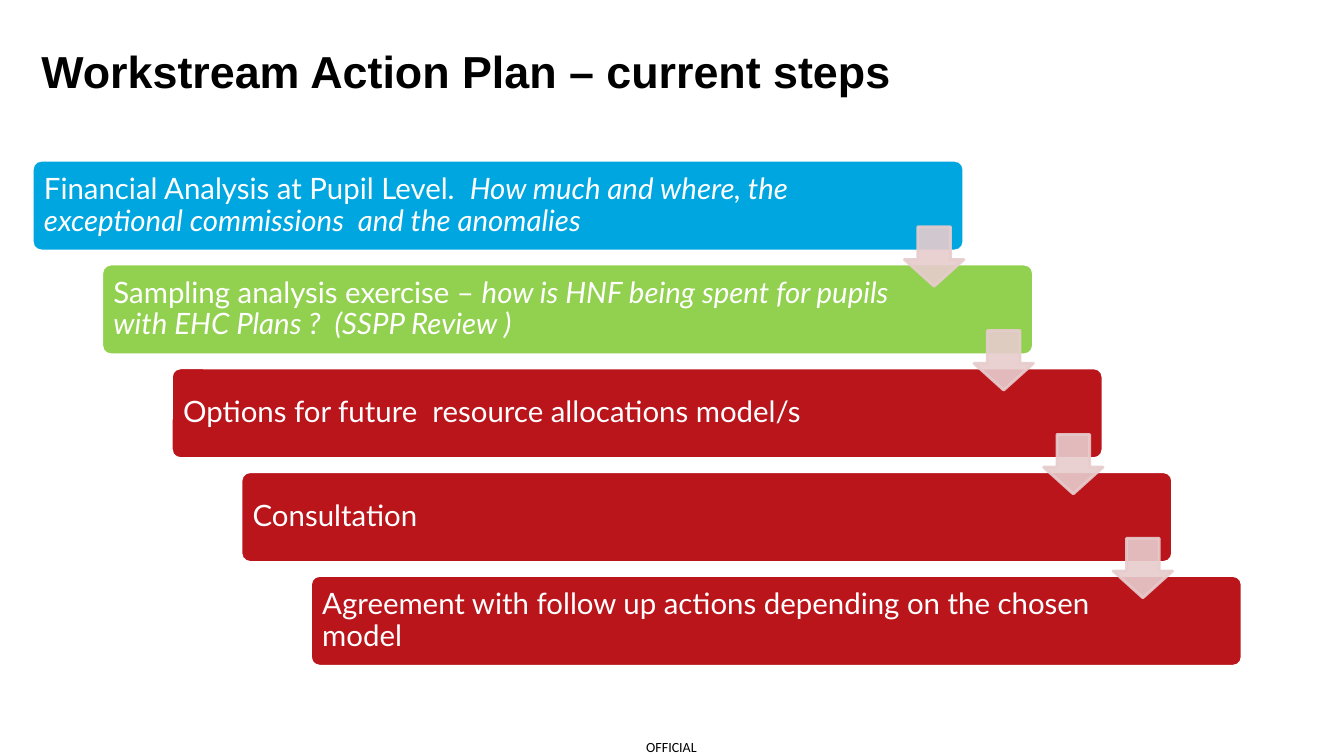
"""Build the workstream action plan slide as a staircase of steps joined by arrows."""
from dataclasses import dataclass

from lxml import etree
from pptx import Presentation
from pptx.dml.color import RGBColor
from pptx.enum.shapes import MSO_SHAPE
from pptx.enum.text import MSO_ANCHOR, PP_ALIGN
from pptx.oxml.ns import qn
from pptx.shapes.autoshape import Shape
from pptx.slide import Slide
from pptx.util import Inches, Pt

BAR = MSO_SHAPE.ROUNDED_RECTANGLE
ARROW = MSO_SHAPE.DOWN_ARROW
MIDDLE = MSO_ANCHOR.MIDDLE
LEFT = PP_ALIGN.LEFT

COLORS = {
    "blue": "00A6E0",
    "green": "92D050",
    "red": "BB151C",
    "arrow": "E7CCCD",
    "white": "FFFFFF",
    "black": "000000",
}
STEP_X, STEP_Y = 0.69, 1.03
BAR_X, BAR_Y, BAR_W, BAR_H = 0.32, 1.59, 9.24, 0.9
ARROW_X, ARROW_Y, ARROW_SIZE = 8.97, 2.25, 0.59


@dataclass
class Step:
    color: str
    text: str
    question: str = ""


STEPS = [
    Step("blue", "Financial Analysis at Pupil Level.  ",
         "How much and where, the exceptional commissions  and the anomalies"),
    Step("green", "Sampling analysis exercise – ",
         "how is HNF being spent for pupils with EHC Plans ?  (SSPP Review )"),
    Step("red", "Options for future  resource allocations model/s"),
    Step("red", "Consultation"),
    Step("red", "Agreement with follow up actions depending on the chosen model"),
]


def rgb(name: str) -> RGBColor:
    return RGBColor.from_string(COLORS[name])


def add_text(s: Slide, box: tuple[float, ...], text: str, font: str, size: float,
             bold: bool = False, inset: tuple[float, float] = (0, 0),
             wrap: bool = True) -> None:
    tf = s.shapes.add_textbox(*map(Inches, box)).text_frame
    tf.word_wrap = wrap
    tf.vertical_anchor = MIDDLE
    tf.margin_left = tf.margin_right = Inches(inset[0])
    tf.margin_top = tf.margin_bottom = Inches(inset[1])
    tf.text = text
    f = tf.paragraphs[0].runs[0].font
    f.name, f.size, f.bold = font, Pt(size), bold
    f.color.rgb = rgb("black")


def add_filled(s: Slide, kind: MSO_SHAPE, box: tuple[float, ...],
               fill: str, line: str) -> Shape:
    sp = s.shapes.add_shape(kind, *map(Inches, box))
    sp.shadow.inherit = False
    sp.fill.solid()
    sp.fill.fore_color.rgb = rgb(fill)
    sp.line.color.rgb = rgb(line)
    sp.line.width = Pt(2)
    return sp


def add_bar(s: Slide, index: int, step: Step) -> None:
    box = (BAR_X + index * STEP_X, BAR_Y + index * STEP_Y, BAR_W, BAR_H)
    sp = add_filled(s, BAR, box, step.color, "white")
    sp.adjustments[0] = 0.1
    tf = sp.text_frame
    tf.word_wrap = True
    tf.vertical_anchor = MIDDLE
    tf.margin_left = tf.margin_top = tf.margin_bottom = Inches(0.09)
    tf.margin_right = Inches(1.36)
    p = tf.paragraphs[0]
    p.alignment = LEFT
    p.line_spacing = 0.9
    p.text = step.text
    if step.question:
        r = p.add_run()
        r.text = step.question
        r.font.italic = True
    for r in p.runs:
        r.font.name, r.font.size = "Lato", Pt(21)
        r.font.color.rgb = rgb("white")


def add_arrow(s: Slide, index: int) -> None:
    box = (ARROW_X + index * STEP_X, ARROW_Y + index * STEP_Y, ARROW_SIZE, ARROW_SIZE)
    sp = add_filled(s, ARROW, box, "arrow", "arrow")
    sp.adjustments[0], sp.adjustments[1] = 0.55, 0.45
    for clr in sp.element.spPr.iter(qn("a:srgbClr")):
        etree.SubElement(clr, qn("a:alpha")).set("val", "90000")


def main() -> None:
    prs = Presentation()
    prs.slide_width, prs.slide_height = Inches(13.33), Inches(7.5)
    s = prs.slides.add_slide(prs.slide_layouts[6])
    add_text(s, (6.41, 7.33, 0.53, 0.17), "OFFICIAL", "Calibri", 10, wrap=False)
    add_text(s, (0.32, 0.16, 10.12, 1.09), "Workstream Action Plan – current steps",
             "Arial", 32, bold=True, inset=(0.09, 0.04))
    for i, step in enumerate(STEPS):
        add_bar(s, i, step)
    for i in range(len(STEPS) - 1):
        add_arrow(s, i)
    prs.save("out.pptx")


if __name__ == "__main__":
    main()
